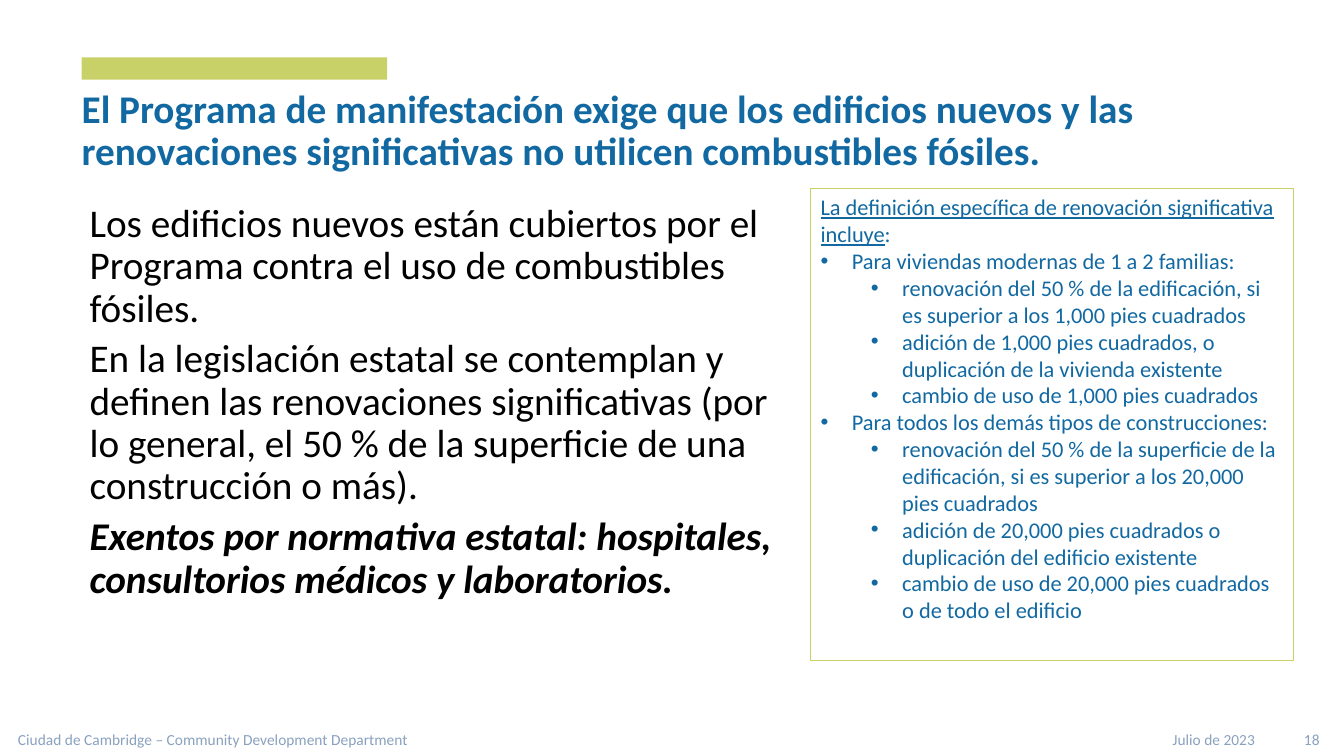
from dataclasses import dataclass

from pptx import Presentation
from pptx import util as u
from pptx.dml.color import RGBColor
from pptx.enum import shapes, text
from pptx.oxml.xmlchemy import OxmlElement


@dataclass(frozen=True)
class Theme:
    font: str = "Calibri"
    blue: RGBColor = RGBColor(0x12, 0x69, 0xA2)
    green: RGBColor = RGBColor(0xC8, 0xD0, 0x68)
    gray: RGBColor = RGBColor(0x8A, 0xA1, 0xBF)
    black: RGBColor = RGBColor(0, 0, 0)
    large: int = 28
    detail: int = 16
    footer: int = 11


theme = Theme()


def place(sp, left, top, width, height, anchor):
    sp.left, sp.top = u.Inches(left), u.Inches(top)
    sp.width, sp.height = u.Inches(width), u.Inches(height)
    tf = sp.text_frame
    tf.word_wrap = True
    tf.auto_size = text.MSO_AUTO_SIZE.NONE
    tf.vertical_anchor = anchor
    return tf


def style(p, size, color, bold=False, italic=False):
    p.alignment = text.PP_ALIGN.LEFT
    for r in p.runs:
        r.font.name, r.font.size = theme.font, u.Pt(size)
        r.font.color.rgb = color
        r.font.bold, r.font.italic = bold, italic


prs = Presentation()
prs.slide_width, prs.slide_height = u.Inches(13.33), u.Inches(7.5)
s = prs.slides.add_slide(prs.slide_layouts[5])
top, middle = text.MSO_ANCHOR.TOP, text.MSO_ANCHOR.MIDDLE

# Title
tf = place(s.shapes.title, 0.71, 0.73, 11.5, 1.15, middle)
tf.text = ("El Programa de manifestación exige que los edificios nuevos y las "
           "renovaciones significativas no utilicen combustibles fósiles.")
tf.paragraphs[0].line_spacing = 0.9
style(tf.paragraphs[0], theme.large, theme.blue, bold=True)

# Main statements, the last one emphasised
statements = [
    "Los edificios nuevos están cubiertos por el Programa contra el uso de combustibles fósiles.",
    "En la legislación estatal se contemplan y definen las renovaciones significativas "
    "(por lo general, el 50 % de la superficie de una construcción o más).",
    "Exentos por normativa estatal: hospitales, consultorios médicos y laboratorios.",
]
tf = place(s.shapes.add_textbox(0, 0, 0, 0), 0.79, 1.97, 7.25, 4.75, top)
tf.text = "\n".join(statements)
for p in tf.paragraphs:
    p.line_spacing, p.space_before = 0.9, u.Pt(6)
    last = p.text == statements[-1]
    style(p, theme.large, theme.black, bold=last, italic=last)

# Definition box: heading, then bullets on two levels
definition = [
    (0, "Para viviendas modernas de 1 a 2 familias:"),
    (1, "renovación del 50 % de la edificación, si es superior a los 1,000 pies cuadrados"),
    (1, "adición de 1,000 pies cuadrados, o duplicación de la vivienda existente"),
    (1, "cambio de uso de 1,000 pies cuadrados"),
    (0, "Para todos los demás tipos de construcciones:"),
    (1, "renovación del 50 % de la superficie de la edificación, "
        "si es superior a los 20,000 pies cuadrados"),
    (1, "adición de 20,000 pies cuadrados o duplicación del edificio existente"),
    (1, "cambio de uso de 20,000 pies cuadrados o de todo el edificio"),
]
box = s.shapes.add_shape(shapes.MSO_SHAPE.RECTANGLE, 0, 0, 0, 0)
box.shadow.inherit = False
box.fill.background()
box.line.color.rgb, box.line.width = theme.green, u.Pt(0.75)
tf = place(box, 8.04, 1.87, 4.79, 4.68, top)
p = tf.paragraphs[0]
for words in ("La definición específica de renovación significativa incluye", ":"):
    r = p.add_run()
    r.text = words
    r.font.underline = words != ":"
style(p, theme.detail, theme.blue)
for level, words in definition:
    p = tf.add_paragraph()
    p.text, p.level = words, level
    style(p, theme.detail, theme.blue)
    pPr = p._p.get_or_add_pPr()
    pPr.set("marL", str(u.Inches(0.31 + 0.5 * level)))
    pPr.set("indent", str(u.Inches(-0.31)))
    font = OxmlElement("a:buFont")
    font.set("typeface", "Arial")
    bullet = OxmlElement("a:buChar")
    bullet.set("char", "•")
    pPr.extend([font, bullet])

# Footer: source on the left, date and slide number on right-aligned tab stops
footers = [
    (0.08, 4.5, "Ciudad de Cambridge – Community Development Department", ()),
    (10.2, 3, "\tJulio de 2023\t18", (2.15, 2.79)),
]
for left, width, words, stops in footers:
    tf = place(s.shapes.add_textbox(0, 0, 0, 0), left, 7.19, width, 0.29, middle)
    tf.text = words
    p = tf.paragraphs[0]
    style(p, theme.footer, theme.gray)
    if stops:
        tabs = OxmlElement("a:tabLst")
        for stop in stops:
            tab = OxmlElement("a:tab")
            tab.set("pos", str(u.Inches(stop)))
            tab.set("algn", "r")
            tabs.append(tab)
        p._p.get_or_add_pPr().append(tabs)

# Accent bar above the title
bar = s.shapes.add_shape(shapes.MSO_SHAPE.RECTANGLE, u.Inches(0.81), u.Inches(0.57),
                         u.Inches(3.03), u.Inches(0.22))
bar.shadow.inherit = False
bar.fill.solid()
bar.fill.fore_color.rgb = theme.green
bar.line.fill.background()

prs.save("out.pptx")
